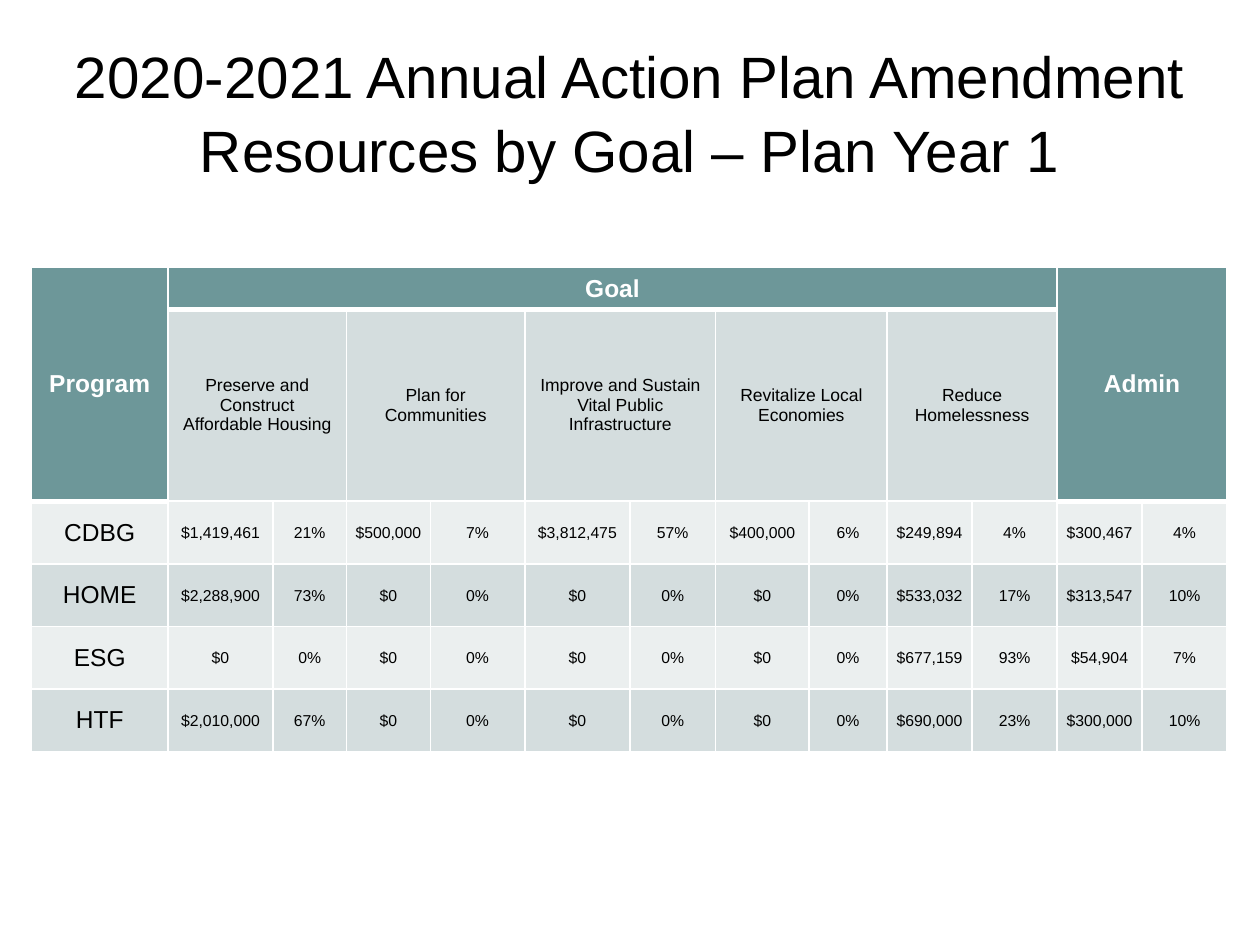
"""Build the slide with the plan year 1 resources by goal."""
from lxml import etree
from pptx import Presentation
from pptx.dml.color import RGBColor
from pptx.enum.text import MSO_ANCHOR, PP_ALIGN
from pptx.oxml.ns import qn
from pptx.util import Pt

MIDDLE = MSO_ANCHOR.MIDDLE
CENTER = PP_ALIGN.CENTER
BLACK = RGBColor(0x00, 0x00, 0x00)
WHITE = RGBColor(0xFF, 0xFF, 0xFF)
TEAL = RGBColor(0x6D, 0x97, 0x99)
MIST = RGBColor(0xD4, 0xDD, 0xDE)
PALE = RGBColor(0xEB, 0xEF, 0xEF)

WIDTHS = [78, 60, 42, 48, 54, 60, 49, 53.5, 44.5] + [48.6] * 4
HEIGHTS = [23, 109.5] + [35.75] * 4
GOALS = [
    "Preserve and Construct Affordable Housing",
    "Plan for Communities",
    "Improve and Sustain Vital Public Infrastructure",
    "Revitalize Local Economies",
    "Reduce Homelessness",
]
FUNDS = [
    "CDBG $1,419,461 21% $500,000 7% $3,812,475 57% $400,000 6% $249,894 4% $300,467 4%",
    "HOME $2,288,900 73% $0 0% $0 0% $0 0% $533,032 17% $313,547 10%",
    "ESG $0 0% $0 0% $0 0% $0 0% $677,159 93% $54,904 7%",
    "HTF $2,010,000 67% $0 0% $0 0% $0 0% $690,000 23% $300,000 10%",
]


def write(frame, text, size, color=BLACK, bold=False, space=None):
    para = frame.paragraphs[0]
    para.text = text
    para.alignment = CENTER
    para.line_spacing = space
    para.font.name = "Arial"
    para.font.size = Pt(size)
    para.font.bold = bold
    para.font.color.rgb = color


def border(cell, top, bottom):
    props = cell._tc.get_or_add_tcPr()
    for side, width in (("L", 1), ("R", 1), ("T", top), ("B", bottom)):
        line = etree.SubElement(props, qn(f"a:ln{side}"), w=str(Pt(width)))
        fill = etree.SubElement(line, qn("a:solidFill"))
        etree.SubElement(fill, qn("a:srgbClr"), val=str(WHITE))


deck = Presentation()
deck.slide_width, deck.slide_height = Pt(720), Pt(540)
slide = deck.slides.add_slide(deck.slide_layouts[6])

title = slide.shapes.add_textbox(Pt(18), Pt(18), Pt(684), Pt(90)).text_frame
title.word_wrap = True
title.vertical_anchor = MIDDLE
write(title, "2020-2021 Annual Action Plan Amendment\vResources by Goal – Plan Year 1",
      33.3, space=1.05)

table = slide.shapes.add_table(
    len(HEIGHTS), len(WIDTHS), Pt(18), Pt(152.9), Pt(sum(WIDTHS)), Pt(sum(HEIGHTS))
).table
for column, width in zip(table.columns, WIDTHS):
    column.width = Pt(width)
for row, height in zip(table.rows, HEIGHTS):
    row.height = Pt(height)

for r in range(len(HEIGHTS)):
    for c in range(len(WIDTHS)):
        cell = table.cell(r, c)
        side = c in (0, 11, 12)
        top = 3 if (r == 1 and not side) or (r == 2 and side) else 1
        bottom = 3 if r == 0 or (r == 1 and side) else 1
        border(cell, top, bottom)
        cell.vertical_anchor = MIDDLE
        cell.fill.solid()
        if r == 0 or (r == 1 and side):
            cell.fill.fore_color.rgb = TEAL
        else:
            cell.fill.fore_color.rgb = MIST if r % 2 else PALE

for text, left, low, right in (("Program", 0, 1, 0), ("Goal", 1, 0, 10), ("Admin", 11, 1, 12)):
    head = table.cell(0, left)
    head.merge(table.cell(low, right))
    write(head.text_frame, text, 14, WHITE, True)

for i, goal in enumerate(GOALS):
    cell = table.cell(1, 1 + 2 * i)
    cell.merge(table.cell(1, 2 + 2 * i))
    write(cell.text_frame, goal, 10)

for r, fund in enumerate(FUNDS, 2):
    name, *values = fund.split()
    write(table.cell(r, 0).text_frame, name, 14)
    for c, value in enumerate(values, 1):
        cell = table.cell(r, c)
        cell.margin_left = cell.margin_right = Pt(3)
        cell.margin_top = cell.margin_bottom = Pt(0)
        write(cell.text_frame, value, 9, space=1.07)

deck.save("out.pptx")
